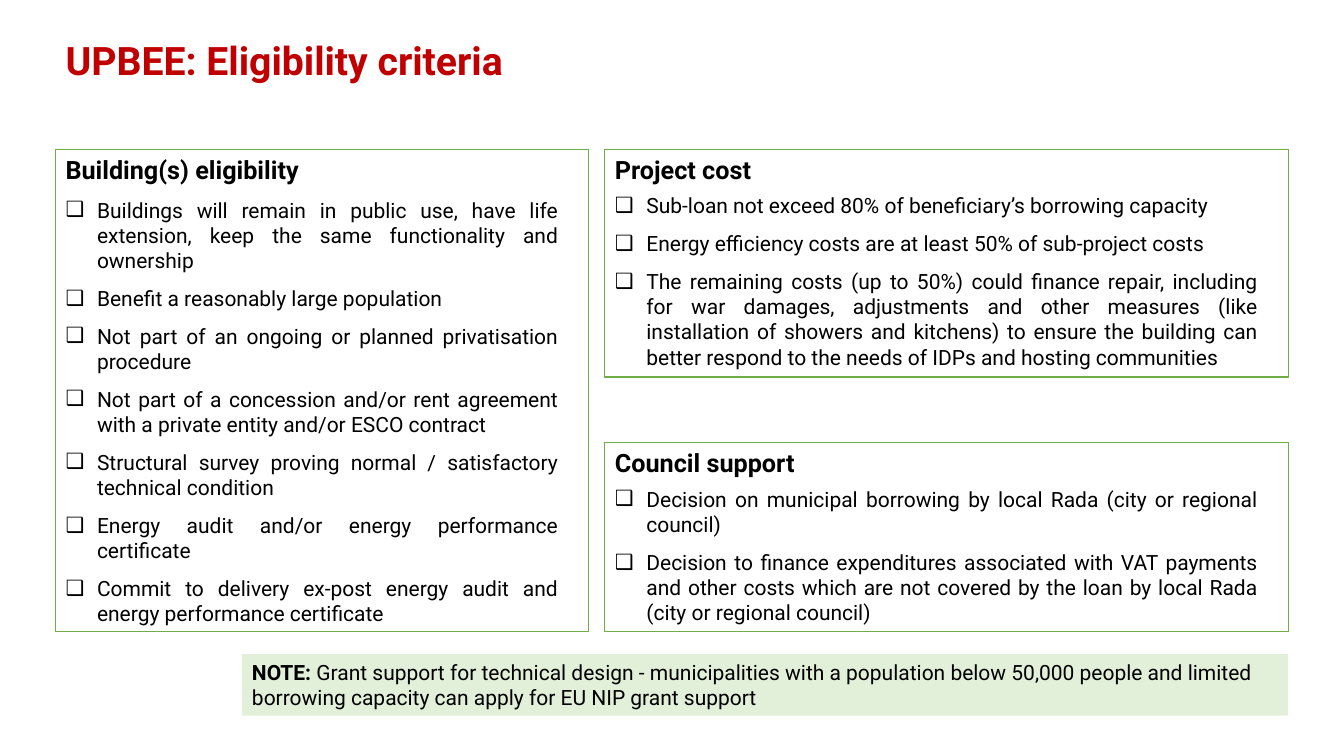
from lxml import etree
from pptx import Presentation
from pptx.dml.color import RGBColor
from pptx.enum.text import MSO_ANCHOR, MSO_AUTO_SIZE, PP_ALIGN
from pptx.oxml.ns import qn
from pptx.util import Pt

LEFT, JUST = PP_ALIGN.LEFT, PP_ALIGN.JUSTIFY
TOP, MIDDLE = MSO_ANCHOR.TOP, MSO_ANCHOR.MIDDLE
FIXED = MSO_AUTO_SIZE.NONE

# Content
TITLE = "UPBEE: Eligibility criteria"
BUILDING = ("Building(s) eligibility", [
    "Buildings will remain in public use, have life extension, keep the same functionality and ownership",
    "Benefit a reasonably large population",
    "Not part of an ongoing or planned privatisation procedure",
    "Not part of a concession and/or rent agreement with a private entity and/or ESCO contract",
    "Structural survey proving normal / satisfactory technical condition",
    "Energy audit and/or energy performance certificate",
    "Commit to delivery ex-post energy audit and energy performance certificate",
])
COST = ("Project cost", [
    "Sub-loan not exceed 80% of beneficiary’s borrowing capacity",
    "Energy efficiency costs are at least 50% of sub-project costs",
    "The remaining costs (up to 50%) could finance repair, including for war damages, "
    "adjustments and other measures (like installation of showers and kitchens) to ensure "
    "the building can better respond to the needs of IDPs and hosting communities",
])
COUNCIL = ("Council support", [
    "Decision on municipal borrowing by local Rada (city or regional council)",
    "Decision to finance expenditures associated with VAT payments and other costs which "
    "are not covered by the loan by local Rada (city or regional council)",
])
NOTE = ("NOTE: ", "Grant support for technical design - municipalities with a population below "
        "50,000 people and limited borrowing capacity can apply for EU NIP grant support")

# Style
FONT = "Roboto"
COLORS = {"title": "C00000", "text": "000000", "panel": "FFFFFF",
          "edge": "70AD47", "note": "E2F0D9"}
HEAD, BODY = 18, 15
INDENT, INSET = 22.5, 14.4

# Layout
X, Y, END, BASE = 39.6, 106.6, 920.2, 451.1
MID = 432
PANELS = [  # content, left, top, right, bottom, space after heading
    (BUILDING, X, Y, 420.5, BASE, 3),
    (COST, MID, Y, END, 269.3, 0),
    (COUNCIL, MID, 316.1, END, BASE, 0),
]


def color(name):
    return RGBColor.from_string(COLORS[name])


def place(shape, left, top, right, bottom, anchor=TOP):
    shape.left, shape.top = Pt(left), Pt(top)
    shape.width, shape.height = Pt(right - left), Pt(bottom - top)
    frame = shape.text_frame
    frame.word_wrap = True
    frame.auto_size = FIXED
    frame.vertical_anchor = anchor
    return frame


def paint(shape, fill):
    shape.fill.solid()
    shape.fill.fore_color.rgb = color(fill)


def add_run(para, text, size, bold, ink="text"):
    run = para.add_run()
    run.text = text
    run.font.name, run.font.size, run.font.bold = FONT, Pt(size), bold
    run.font.color.rgb = color(ink)


def format_para(para, align=LEFT, before=0, after=0, bullet=None):
    props = para._p.get_or_add_pPr()
    indent = INDENT if bullet else 0
    props.set("marL", str(Pt(indent)))
    props.set("indent", str(Pt(-indent)))
    if bullet:
        props.set("marR", str(Pt(INSET)))
        etree.SubElement(props, qn("a:buChar")).set("char", bullet)
    else:
        etree.SubElement(props, qn("a:buNone"))
    para.alignment = align
    para.line_spacing = 1.0
    para.space_before, para.space_after = Pt(before), Pt(after)


deck = Presentation()
deck.slide_width, deck.slide_height = Pt(960), Pt(540)
slide = deck.slides.add_slide(deck.slide_layouts.get_by_name("Comparison"))
title, *bodies = [s for s in slide.placeholders if s.placeholder_format.idx < 5]

# Title
frame = place(title, X, 20.9, 414.7, 68.4, MIDDLE)
para = frame.paragraphs[0]
para.alignment, para.line_spacing = LEFT, 0.9
add_run(para, TITLE, 28, True, "title")

# Criteria panels
for shape, ((head, items), left, top, right, bottom, after) in zip(bodies, PANELS):
    frame = place(shape, left, top, right, bottom)
    paint(shape, "panel")
    shape.line.color.rgb = color("edge")
    shape.line.width = Pt(1)
    para = frame.paragraphs[0]
    format_para(para, after=after)
    add_run(para, head, HEAD, True)
    for item in items:
        para = frame.add_paragraph()
        format_para(para, JUST, 6, 3, "❑")
        add_run(para, item, BODY, False)

# Note
note = bodies[-1]
frame = place(note, 172.8, 467.3, END, 511.2)
paint(note, "note")
para = frame.paragraphs[0]
format_para(para)
for text, bold in zip(NOTE, (True, False)):
    add_run(para, text, BODY, bold)

deck.save("out.pptx")
